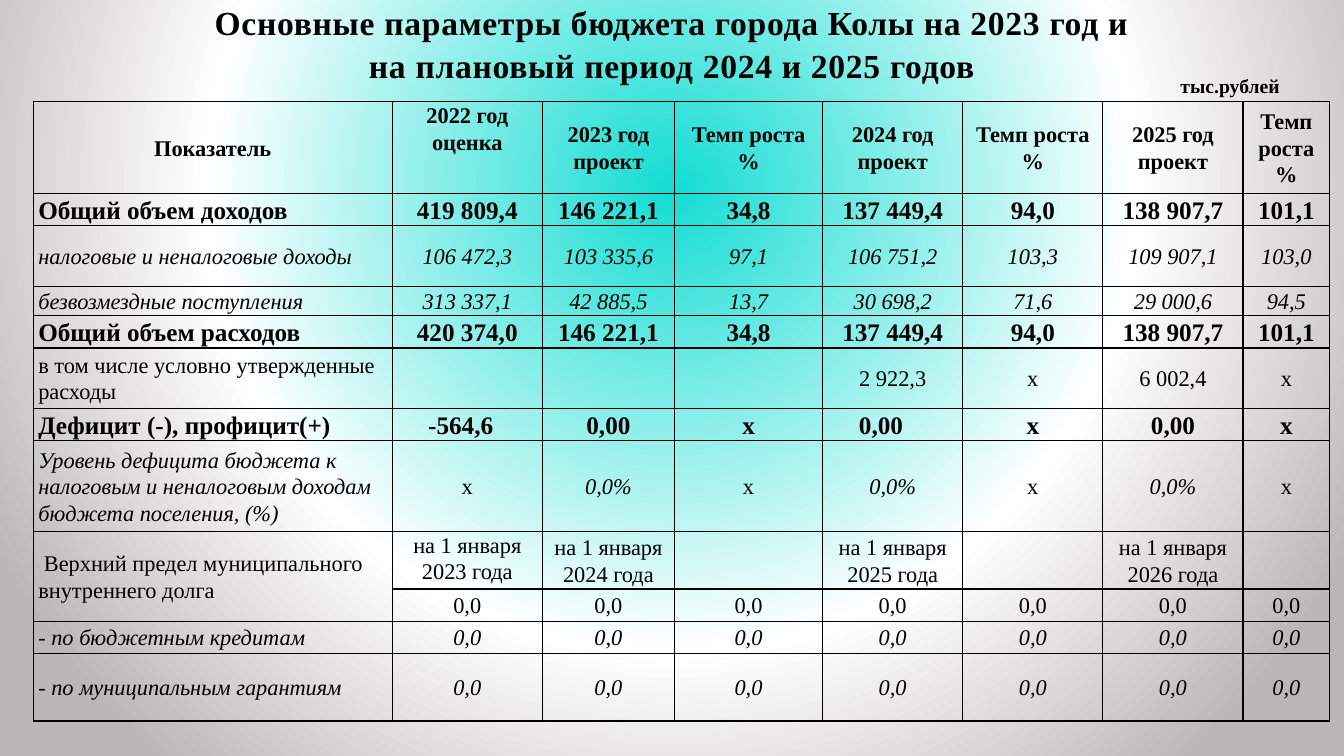
import pptx
import pptx.util
import pptx.dml.color
import pptx.enum.text
import pptx.oxml
import pptx.oxml.ns
import lxml.etree

Inches = pptx.util.Inches
Pt = pptx.util.Pt
RGB = pptx.dml.color.RGBColor
ALIGN = pptx.enum.text.PP_ALIGN
ANCHOR = pptx.enum.text.MSO_ANCHOR
qn = pptx.oxml.ns.qn

FONT = "Times New Roman"
BLACK = RGB(0x00, 0x00, 0x00)
TEAL = RGB(0x13, 0xDD, 0xD3)
WHITE = RGB(0xFF, 0xFF, 0xFF)
GRAY = RGB(0xBB, 0xB7, 0xB7)

COLS = [3.56, 1.49, 1.31, 1.47, 1.39, 1.39, 1.39, 0.86]
HEAD = (16, True, False)
TOTAL = (18, True, False)
PLAIN = (16, False, False)
ITALIC = (16, False, True)
ZEROS = ["0,0"] * 7
ROWS = [
    (0.91, HEAD, ["Показатель", "2022 год оценка", "2023 год проект", "Темп роста %",
                  "2024 год проект", "Темп роста %", "2025 год проект", "Темп роста %"]),
    (0.31, TOTAL, ["Общий объем доходов", "419 809,4", "146 221,1", "34,8",
                   "137 449,4", "94,0", "138 907,7", "101,1"]),
    (0.6, ITALIC, ["налоговые и неналоговые доходы", "106 472,3", "103 335,6", "97,1",
                   "106 751,2", "103,3", "109 907,1", "103,0"]),
    (0.29, ITALIC, ["безвозмездные поступления", "313 337,1", "42 885,5", "13,7",
                    "30 698,2", "71,6", "29 000,6", "94,5"]),
    (0.31, TOTAL, ["Общий объем расходов", "420 374,0", "146 221,1", "34,8",
                   "137 449,4", "94,0", "138 907,7", "101,1"]),
    (0.6, PLAIN, ["в том числе условно утвержденные расходы", "", "", "",
                  "2 922,3", "х", "6 002,4", "х"]),
    (0.31, TOTAL, ["Дефицит (-), профицит(+)", "-564,6", "0,00", "х",
                   "0,00", "х", "0,00", "х"]),
    (0.9, ITALIC, ["Уровень дефицита бюджета к налоговым и неналоговым доходам "
                   "бюджета поселения, (%)", "х", "0,0%", "х", "0,0%", "х", "0,0%", "х"]),
    (0.57, PLAIN, [" Верхний предел муниципального внутреннего долга",
                   "на 1 января 2023 года", "на 1 января 2024 года", "",
                   "на 1 января 2025 года", "", "на 1 января 2026 года", ""]),
    (0.32, PLAIN, [""] + ZEROS),
    (0.32, ITALIC, ["- по бюджетным кредитам"] + ZEROS),
    (0.67, ITALIC, ["- по муниципальным гарантиям"] + ZEROS),
]
DEBT = 8
DEFICIT = 6
TOP_CELLS = [(0, 1), (DEBT, 1)]


def style(para, size, bold=True, italic=False):
    """Format every run of a paragraph."""
    for run in para.runs:
        font = run.font
        font.name, font.size = FONT, Pt(size)
        font.bold, font.italic = bold, italic
        font.color.rgb = BLACK


def paint(slide):
    """Fill the background with a radial gradient."""
    slide.background.fill.gradient()
    grad = slide.element.find(".//" + qn("a:gradFill"))
    for child in list(grad):
        grad.remove(child)
    stops = lxml.etree.SubElement(grad, qn("a:gsLst"))
    for pos, color, alpha in [(0, TEAL, 56), (60, WHITE, 100), (100, GRAY, 100)]:
        stop = lxml.etree.SubElement(stops, qn("a:gs"), pos=str(pos * 1000))
        tint = lxml.etree.SubElement(stop, qn("a:srgbClr"), val=str(color))
        if alpha < 100:
            lxml.etree.SubElement(tint, qn("a:alpha"), val=str(alpha * 1000))
    shade = lxml.etree.SubElement(grad, qn("a:path"))
    shade.set("path", "circle")
    lxml.etree.SubElement(shade, qn("a:fillToRect"), l="20000", t="10000", r="20000", b="60000")


def add_title(slide, left, top, width, height):
    """Place the heading in the title placeholder."""
    title = slide.shapes.title
    title.left, title.top = Inches(left), Inches(top)
    title.width, title.height = Inches(width), Inches(height)
    frame = title.text_frame
    frame.text = "Основные параметры бюджета города Колы на 2023 год и на плановый период 2024 и 2025 годов"
    frame.word_wrap = True
    frame.auto_size = pptx.enum.text.MSO_AUTO_SIZE.NONE
    frame.vertical_anchor = ANCHOR.TOP
    para = frame.paragraphs[0]
    para.alignment, para.line_spacing = ALIGN.CENTER, 1.07
    style(para, 24)
    para.runs[0].font._element.set("spc", "50")


def add_unit(slide, left, top, width, height):
    """Place the unit label above the table."""
    box = slide.shapes.add_textbox(Inches(left), Inches(top), Inches(width), Inches(height))
    box.text_frame.text = "тыс.рублей"
    box.text_frame.word_wrap = True
    style(box.text_frame.paragraphs[0], 14)


def frame_cell(cell):
    """Draw thin black borders and clear the fill."""
    props = cell._tc.get_or_add_tcPr()
    for side in ("lnL", "lnR", "lnT", "lnB"):
        line = lxml.etree.SubElement(props, qn("a:" + side), w=str(Pt(1)))
        fill = lxml.etree.SubElement(line, qn("a:solidFill"))
        lxml.etree.SubElement(fill, qn("a:srgbClr"), val=str(BLACK))
    cell.fill.background()


def fill_cell(cell, text, look, align, anchor):
    """Write one table cell."""
    frame_cell(cell)
    cell.margin_left = cell.margin_right = Inches(0.05)
    cell.margin_top = cell.margin_bottom = 0
    cell.vertical_anchor = anchor
    cell.text_frame.text = text
    para = cell.text_frame.paragraphs[0]
    para.alignment, para.line_spacing = align, 1.07
    size, bold, italic = look
    style(para, size, bold, italic and text != "х")


def add_budget(slide, left, top, width, height):
    """Build the budget table in the given box."""
    table = slide.shapes.add_table(len(ROWS), len(COLS), Inches(left), Inches(top),
                                   Inches(width), Inches(height)).table
    table.first_row = table.horz_banding = False
    for col, size in zip(table.columns, COLS):
        col.width = Inches(size)
    for row, (tall, look, texts) in enumerate(ROWS):
        table.rows[row].height = Inches(tall)
        for col, text in enumerate(texts):
            align = ALIGN.CENTER if col or not row else ALIGN.LEFT
            anchor = ANCHOR.TOP if (row, col) in TOP_CELLS else ANCHOR.MIDDLE
            fill_cell(table.cell(row, col), text, look, align, anchor)
    table.cell(DEBT, 0).merge(table.cell(DEBT + 1, 0))
    table.cell(DEFICIT, 1).margin_right = Inches(0.18)
    shifted = table.cell(DEFICIT, 4)
    shifted.margin_left = Inches(0.36)
    shifted.text_frame.paragraphs[0].alignment = ALIGN.LEFT


def main():
    """Build and save the slide."""
    deck = pptx.Presentation()
    deck.slide_width, deck.slide_height = Inches(13.33), Inches(7.5)
    slide = deck.slides.add_slide(deck.slide_layouts[5])
    paint(slide)
    add_title(slide, 1.98, -0.06, 9.37, 1.07)
    add_unit(slide, 11.61, 0.68, 1.24, 0.34)
    add_budget(slide, 0.33, 1.01, 12.85, 6.12)
    deck.save("out.pptx")


if __name__ == "__main__":
    main()
